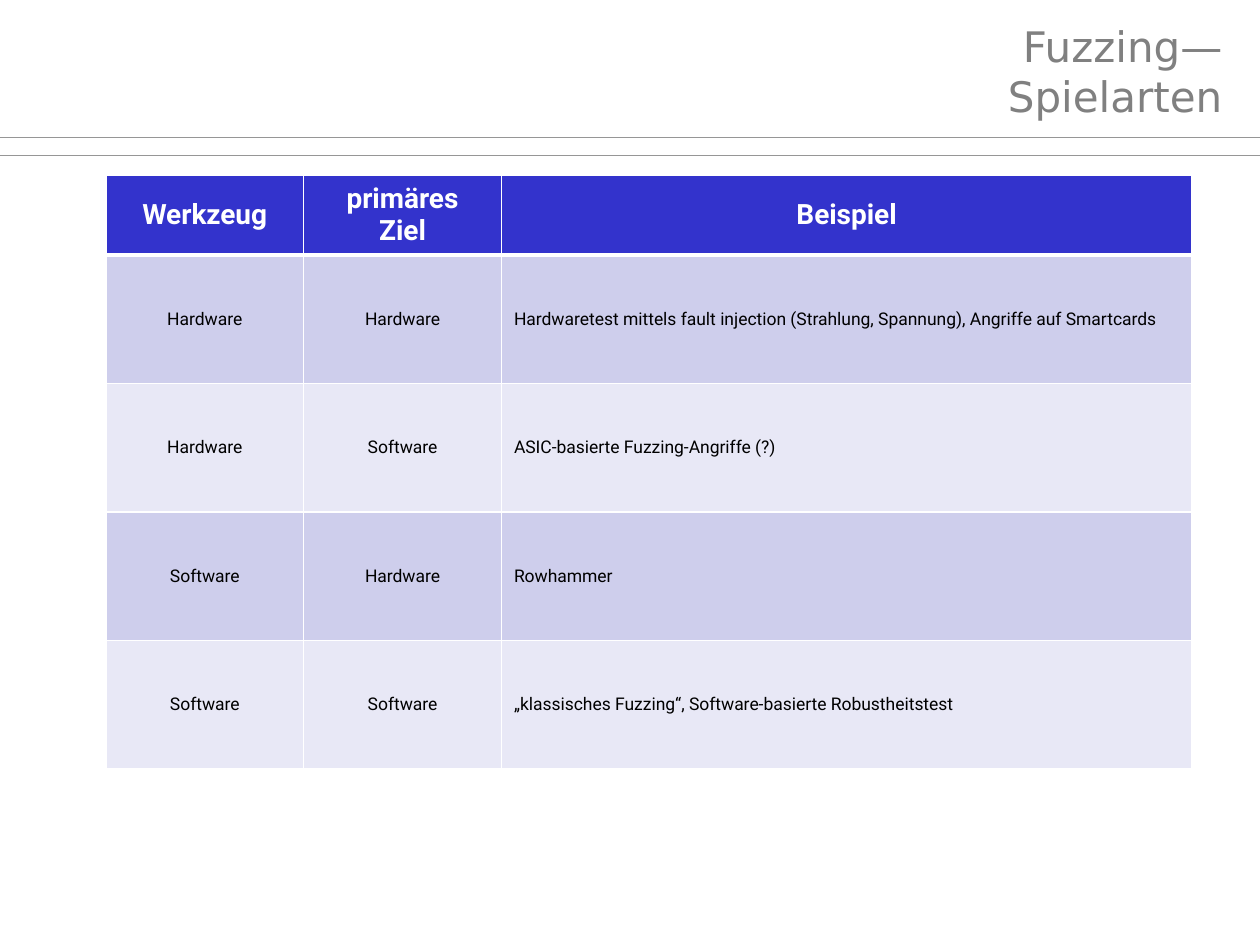
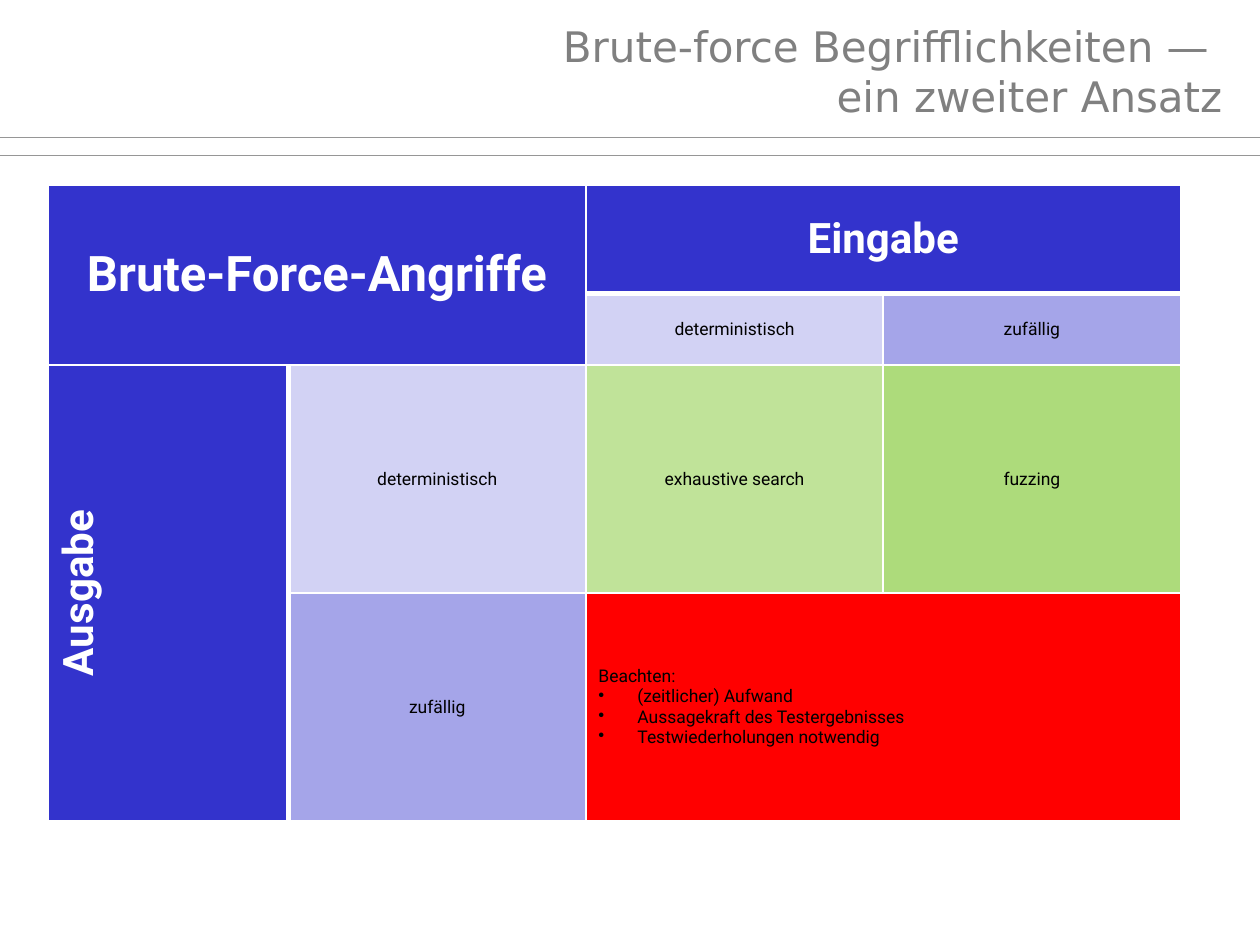
import copy
import dataclasses

import lxml.etree
import pptx
import pptx.dml.color
import pptx.enum.shapes
import pptx.enum.text
import pptx.oxml.ns
import pptx.util

ALIGN = pptx.enum.text.PP_ALIGN
MIDDLE = pptx.enum.text.MSO_ANCHOR.MIDDLE
qn = pptx.oxml.ns.qn


@dataclasses.dataclass(frozen=True)
class Theme:
    title_font: str = "DejaVu Sans"
    body_font: str = "Roboto"
    title_color: str = "808080"
    rule: str = "969696"
    white: str = "FFFFFF"
    black: str = "000000"
    header: str = "3333CC"
    band_dark: str = "CECEEC"
    band_light: str = "E8E8F6"
    deterministic: str = "D2D2F4"
    random: str = "A5A5E9"
    search: str = "C0E399"
    fuzzing: str = "ADDB7B"
    warning: str = "FF0000"
    title_size: int = 24
    corner_size: int = 28
    axis_size: int = 24
    header_size: int = 16
    body_size: int = 10
    rule_width: float = 0.5
    border: int = 1
    thick_border: int = 3


@dataclasses.dataclass
class Cell:
    text: str
    fill: str
    size: int
    color: str
    bold: bool = False
    align: ALIGN = ALIGN.CENTER
    bullets: tuple = ()
    span: tuple = (1, 1)
    thick: str = ""
    vertical: bool = False


class Deck:
    COLUMNS = 100
    ROWS = 75

    def __init__(self, theme):
        self.theme = theme
        self.presentation = pptx.Presentation()
        self.presentation.slide_width = pptx.util.Inches(10)
        self.presentation.slide_height = pptx.util.Inches(7.5)
        self.slide = None

    def x(self, columns):
        return round(self.presentation.slide_width * columns / self.COLUMNS)

    def y(self, rows):
        return round(self.presentation.slide_height * rows / self.ROWS)

    def color(self, value):
        return pptx.dml.color.RGBColor.from_string(value)

    def add_slide(self, title):
        self.slide = self.presentation.slides.add_slide(self.presentation.slide_layouts[6])
        for row in (10.9, 12.3):
            self.add_rule(row)
        self.add_title(title)

    def add_rule(self, row):
        connector = self.slide.shapes.add_connector(
            pptx.enum.shapes.MSO_CONNECTOR.STRAIGHT,
            0, self.y(row), self.x(self.COLUMNS), self.y(row))
        connector.line.color.rgb = self.color(self.theme.rule)
        connector.line.width = pptx.util.Pt(self.theme.rule_width)
        lxml.etree.SubElement(connector._element.spPr, qn("a:effectLst"))

    def add_title(self, text):
        theme = self.theme
        shape = self.slide.shapes.add_textbox(self.x(26.4), self.y(0.9), self.x(71.6), self.y(9.4))
        frame = shape.text_frame
        frame.word_wrap = True
        frame.vertical_anchor = MIDDLE
        frame.margin_left = 0
        paragraph = frame.paragraphs[0]
        paragraph.alignment = ALIGN.RIGHT
        self.add_text(paragraph, text, theme.title_font, theme.title_size, theme.title_color)

    def add_text(self, paragraph, text, font, size, color, bold=False):
        for index, line in enumerate(text.split("\n")):
            if index:
                paragraph.add_line_break()
                line_break = paragraph._p.findall(qn("a:br"))[-1]
                line_break.append(copy.deepcopy(run._r.rPr))
            run = paragraph.add_run()
            run.text = line
            run.font.name = font
            run.font.size = pptx.util.Pt(size)
            run.font.bold = bold
            run.font.color.rgb = self.color(color)

    def add_table(self, left, top, widths, heights, cells):
        frame = self.slide.shapes.add_table(
            len(heights), len(widths), self.x(left), self.y(top),
            self.x(sum(widths)), self.y(sum(heights)))
        table = frame.table
        table.first_row = table.horz_banding = False
        for column, width in zip(table.columns, widths):
            column.width = self.x(width)
        for row, height in zip(table.rows, heights):
            row.height = self.y(height)
        for (row, column), cell in cells.items():
            self.fill_cell(table, row, column, cell)

    def fill_cell(self, table, row, column, cell):
        row_span, column_span = cell.span
        for r in range(row, row + row_span):
            for c in range(column, column + column_span):
                self.style_cell(table.cell(r, c), cell)
        target = table.cell(row, column)
        if cell.span != (1, 1):
            target.merge(table.cell(row + row_span - 1, column + column_span - 1))
        target.vertical_anchor = MIDDLE
        if cell.vertical:
            target._tc.get_or_add_tcPr().set("vert", "vert270")
        for index, text in enumerate((cell.text, *cell.bullets)):
            frame = target.text_frame
            paragraph = frame.add_paragraph() if index else frame.paragraphs[0]
            paragraph.alignment = cell.align
            if index:
                self.add_bullet(paragraph)
            self.add_text(paragraph, text, self.theme.body_font, cell.size, cell.color, cell.bold)

    def style_cell(self, target, cell):
        properties = target._tc.get_or_add_tcPr()
        for side in "LRTB":
            width = self.theme.thick_border if side in cell.thick else self.theme.border
            line = lxml.etree.SubElement(properties, qn(f"a:ln{side}"), w=str(pptx.util.Pt(width)))
            fill = lxml.etree.SubElement(line, qn("a:solidFill"))
            lxml.etree.SubElement(fill, qn("a:srgbClr"), val=self.theme.white)
        target.fill.solid()
        target.fill.fore_color.rgb = self.color(cell.fill)

    def add_bullet(self, paragraph):
        indent = self.x(3.1)
        properties = paragraph._p.get_or_add_pPr()
        properties.set("marL", str(indent))
        properties.set("indent", str(-indent))
        lxml.etree.SubElement(properties, qn("a:buChar"), char="•")

    def header(self, text, size, **options):
        return Cell(text, self.theme.header, size, self.theme.white, bold=True, **options)

    def body(self, text, fill, **options):
        return Cell(text, fill, self.theme.body_size, self.theme.black, **options)


def build_variants(deck):
    theme = deck.theme
    deck.add_slide("Fuzzing—\nSpielarten")
    headings = ("Werkzeug", "primäres\nZiel", "Beispiel")
    variants = (
        ("Hardware", "Hardware",
         "Hardwaretest mittels fault injection (Strahlung, Spannung), Angriffe auf Smartcards"),
        ("Hardware", "Software", "ASIC-basierte Fuzzing-Angriffe (?)"),
        ("Software", "Hardware", "Rowhammer"),
        ("Software", "Software", "„klassisches Fuzzing“, Software-basierte Robustheitstest"),
    )
    cells = {(0, column): deck.header(text, theme.header_size, thick="B")
             for column, text in enumerate(headings)}
    for row, variant in enumerate(variants, 1):
        for column, text in enumerate(variant):
            cells[row, column] = deck.body(
                text, theme.band_dark if row % 2 else theme.band_light,
                align=ALIGN.LEFT if column == 2 else ALIGN.CENTER,
                thick="T" if row == 1 else "")
    deck.add_table(8.4, 13.9, [15.7, 15.7, 54.8], [6.2] + [10.2] * 4, cells)


def build_matrix(deck):
    theme = deck.theme
    deck.add_slide("Brute-force Begrifflichkeiten — \nein zweiter Ansatz")
    cells = {
        (0, 0): deck.header("Brute-Force-Angriffe", theme.corner_size, span=(2, 2)),
        (0, 2): deck.header("Eingabe", theme.axis_size, span=(1, 2), thick="B"),
        (2, 0): deck.header("Ausgabe", theme.axis_size, span=(2, 1), thick="R", vertical=True),
        (2, 2): deck.body("exhaustive search", theme.search),
        (2, 3): deck.body("fuzzing", theme.fuzzing),
        (3, 2): deck.body(
            "Beachten:", theme.warning, align=ALIGN.LEFT, span=(1, 2),
            bullets=("(zeitlicher) Aufwand", "Aussagekraft des Testergebnisses",
                     "Testwiederholungen notwendig")),
    }
    kinds = (("deterministisch", theme.deterministic), ("zufällig", theme.random))
    for index, (text, fill) in enumerate(kinds):
        cells[1, 2 + index] = deck.body(text, fill, thick="T")
        cells[2 + index, 1] = deck.body(text, fill, thick="L")
    deck.add_table(3.8, 14.7, [19.1] + [23.6] * 3, [8.6, 5.5, 18.1, 18.1], cells)


def main():
    deck = Deck(Theme())
    build_variants(deck)
    build_matrix(deck)
    deck.presentation.save("out.pptx")


if __name__ == "__main__":
    main()
